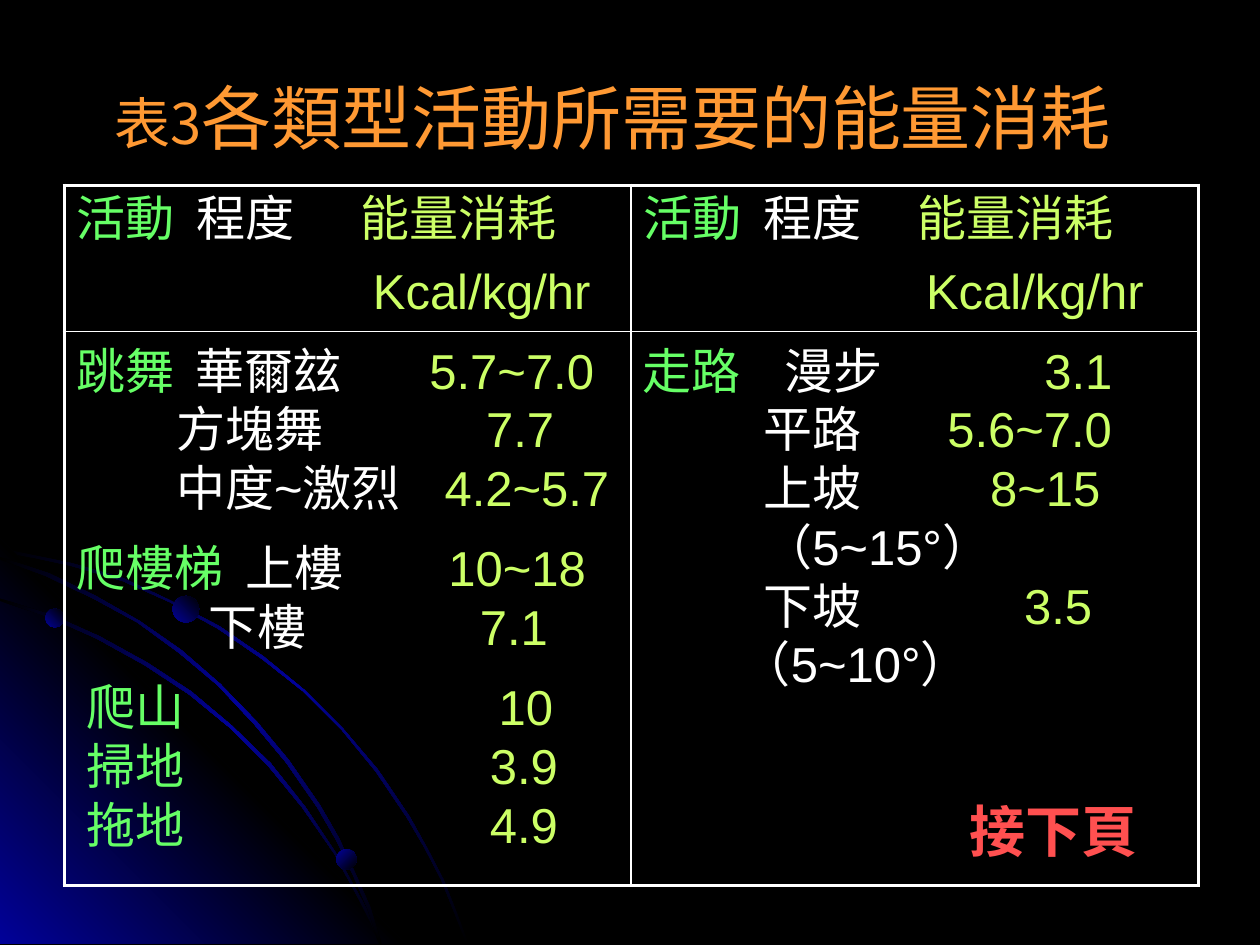
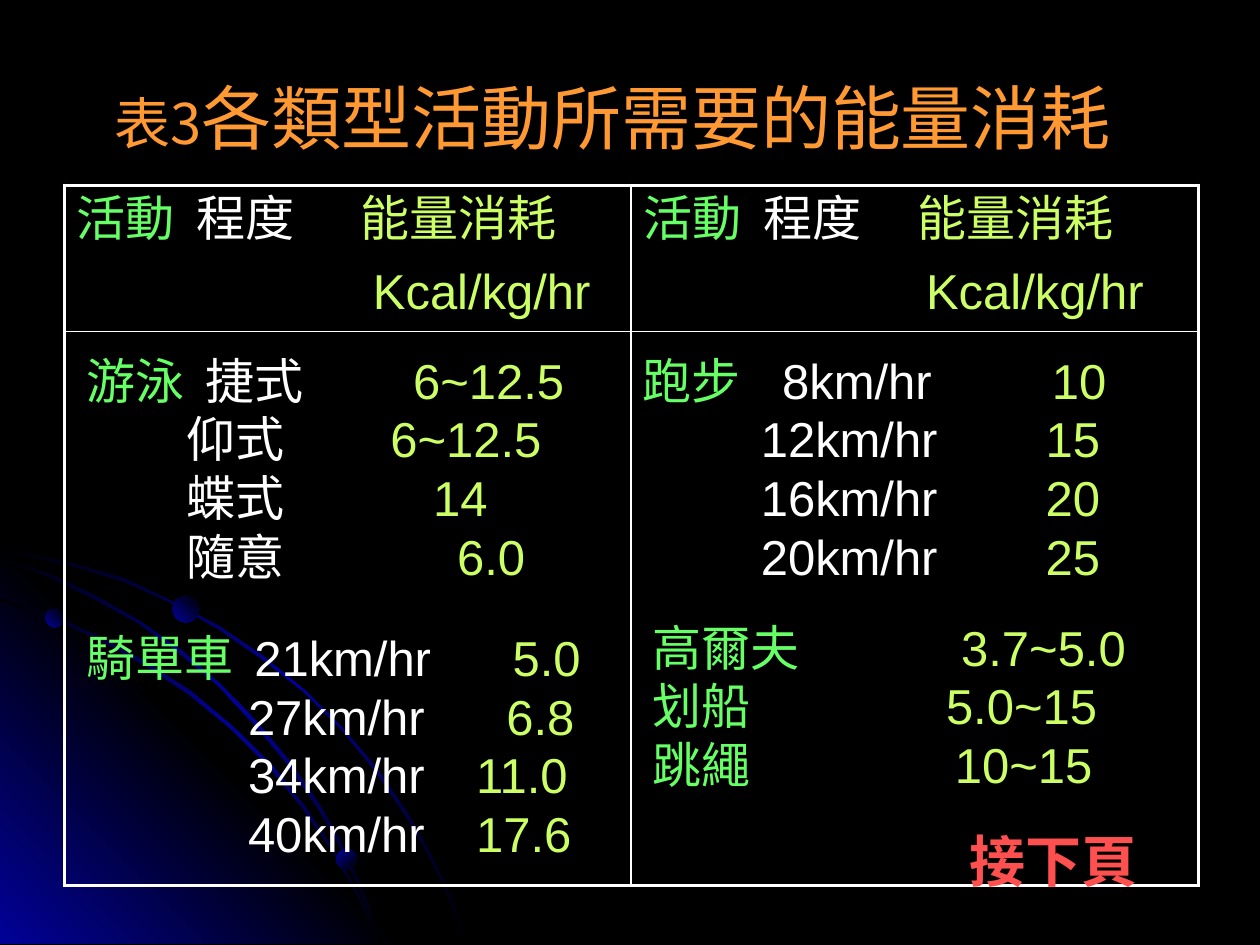
from lxml.etree import SubElement
from pptx import Presentation
from pptx.dml.color import RGBColor
from pptx.enum.shapes import MSO_SHAPE as Shape
from pptx.enum.text import MSO_ANCHOR as Anchor, PP_ALIGN as Align
from pptx.oxml.ns import qn
from pptx.util import Pt

PX = 9144
BLACK = RGBColor(0x00, 0x00, 0x00)
NAVY = RGBColor(0x01, 0x01, 0x99)
WHITE = RGBColor(0xFF, 0xFF, 0xFF)
ORANGE = RGBColor(0xFF, 0x99, 0x33)
GREEN = RGBColor(0x66, 0xFF, 0x66)
LIME = RGBColor(0xCC, 0xFF, 0x66)
RED = RGBColor(0xFF, 0x50, 0x50)
BODY_FONT, TITLE_FONT = "Arial", "Noto Sans CJK SC"
INSET = 10
THICK, THIN = 2.25, 1
TABLE_LEFT, TABLE_TOP, COL_WIDTH = 51, 147, 450
ROW_HEIGHTS = (116, 440)

WIDE_ARC = [
    (57, 447), (28, 441), (0, 435), (0, 438), (28, 443), (56, 449), (97, 461), (135, 478),
    (173, 499), (208, 523), (241, 549), (271, 579), (298, 612), (323, 649), (337, 673),
    (350, 698), (360, 723), (370, 749), (372, 749), (362, 723), (352, 698), (339, 673),
    (325, 648), (300, 611), (272, 578), (242, 548), (209, 521), (174, 497), (136, 477),
    (98, 459)]
GLOW = [(322, 749), (0, 749), (0, 427)]
LOW_ARC = [
    (285, 714), (294, 732), (301, 749), (303, 749), (296, 730), (286, 712), (266, 676),
    (242, 640), (215, 606), (184, 576), (152, 549), (117, 526), (79, 505), (41, 488),
    (0, 475), (0, 477), (39, 490), (77, 507), (115, 528), (150, 551), (183, 578),
    (213, 608), (240, 641), (265, 677)]
MIDDLE_ARC = [
    (0, 442), (0, 444), (36, 457), (74, 475), (109, 494), (142, 518), (173, 544), (202, 575),
    (227, 605), (252, 641), (267, 667), (280, 694), (292, 722), (301, 749), (303, 749),
    (294, 720), (282, 693), (269, 665), (254, 639), (229, 603), (204, 573), (175, 543),
    (144, 516), (111, 493), (76, 473), (39, 455)]
ARC_STOPS = (BLACK, NAVY, BLACK)
BALLS = [(36, 483, 15, 315), (267, 674, 16, 45), (137, 473, 21, 315)]

# Each row: activity, degree, degree x, energy, energy x
HEADERS = [
    [("活動", "程度", 156, "能量消耗", 286), ("", "", 0, "Kcal/kg/hr", 296)],
    [("活動", "程度", 606, "能量消耗", 728), ("", "", 0, "Kcal/kg/hr", 735)],
]
DANCE = [("跳舞", "華爾玆", 155, "5.7~7.0", 341),
         ("", "方塊舞", 140, "7.7", 386),
         ("", "中度~激烈", 140, "4.2~5.7", 353)]
STAIRS = [("爬樓梯", "上樓", 195, "10~18", 356),
          ("", "下樓", 166, "7.1", 381)]
CHORES = [("爬山", "", 0, "10", 396),
          ("掃地", "", 0, "3.9", 389),
          ("拖地", "", 0, "4.9", 389)]
WALKING = [("走路", "漫步", 623, "3.1", 829),
           ("", "平路", 606, "5.6~7.0", 752),
           ("", "上坡", 606, "8~15", 786),
           ("", "（5~15°）", 606, "", 0),
           ("", "下坡", 606, "3.5", 813),
           ("", "（5~10°）", 589, "", 0)]
SWIMMING = [("游泳", "捷式", 163, "6~12.5", 328),
            ("", "仰式", 148, "6~12.5", 310),
            ("", "蝶式", 148, "14", 344),
            ("", "隨意", 148, "6.0", 363)]
CYCLING = [("騎單車", "21km/hr", 202, "5.0", 407),
           ("", "27km/hr", 197, "6.8", 402),
           ("", "34km/hr", 197, "11.0", 378),
           ("", "40km/hr", 197, "17.6", 378)]
RUNNING = [("跑步", "8km/hr", 621, "10", 835)] + [
    ("", f"{speed}km/hr", 604, energy, 830)
    for speed, energy in ((12, "15"), (16, "20"), (20, "25"))]
SPORTS = [("高爾夫", "", 0, "3.7~5.0", 763),
          ("划船", "", 0, "5.0~15", 751),
          ("跳繩", "", 0, "10~15", 758)]

SLIDES = [
    (627, [(DANCE, 51, 265, 465, 150), (STAIRS, 51, 422, 465, 103),
           (CHORES, 59, 532, 473, 150), (WALKING, 500, 265, 465, 360)]),
    (651, [(SWIMMING, 59, 273, 457, 197), (CYCLING, 59, 493, 449, 197),
           (RUNNING, 500, 273, 480, 267), (SPORTS, 508, 485, 461, 220)]),
]


def box(*lengths):
    """Turn px lengths into EMU."""
    return [n * PX for n in lengths]


def add_run(p, text, size, color, font=BODY_FONT, bold=False):
    """Append one formatted run to a paragraph."""
    r = p.add_run()
    r.text = text
    r.font.size, r.font.name, r.font.bold = Pt(size), font, bold
    r.font.color.rgb = color


def set_gradient(s, colors, angle):
    """Fill a shape with evenly spaced gradient stops and no outline."""
    s.shadow.inherit = False
    s.line.fill.background()
    s.fill.gradient()
    grad = s.element.spPr.find(qn("a:gradFill"))
    for child in list(grad):
        grad.remove(child)
    stops = SubElement(grad, qn("a:gsLst"))
    for i, color in enumerate(colors):
        stop = SubElement(stops, qn("a:gs"), pos=str(100000 * i // (len(colors) - 1)))
        SubElement(stop, qn("a:srgbClr"), val=str(color))
    SubElement(grad, qn("a:lin"), ang=str(angle * 60000), scaled="0")


def add_outline(slide, points, colors, angle):
    """Draw a closed gradient outline."""
    builder = slide.shapes.build_freeform(*points[0], scale=PX)
    builder.add_line_segments(points[1:], close=True)
    s = builder.convert_to_shape()
    set_gradient(s, colors, angle)
    return s


def add_ball(slide, left, top, size, angle):
    """Draw a small shaded ball."""
    s = slide.shapes.add_shape(Shape.OVAL, *box(left, top, size, size))
    set_gradient(s, (NAVY, BLACK), angle)
    return s


def decorate_master(prs, slide):
    """Put the background, arcs and balls on the slide master."""
    master = prs.slide_master
    master.background.fill.solid()
    master.background.fill.fore_color.rgb = BLACK
    shapes = [add_outline(slide, WIDE_ARC, ARC_STOPS, 45),
              add_outline(slide, GLOW, (NAVY, BLACK, NAVY), 315),
              add_outline(slide, LOW_ARC, ARC_STOPS, 45),
              add_outline(slide, MIDDLE_ARC, ARC_STOPS, 45)]
    shapes += [add_ball(slide, *ball) for ball in BALLS]
    for i, s in enumerate(shapes):
        s.element.nvSpPr.cNvPr.id = 20 + i
        master.shapes.element.insert(2 + i, s.element)


def add_title(slide):
    """Place and fill the title."""
    s = slide.shapes.title
    s.left, s.top, s.width, s.height = box(35, 30, 915, 125)
    tf = s.text_frame
    tf.vertical_anchor = Anchor.MIDDLE
    p = tf.paragraphs[0]
    p.alignment = Align.CENTER
    add_run(p, "表3", 32, ORANGE, TITLE_FONT)
    add_run(p, "各類型活動所需要的能量消耗 ", 40, ORANGE, TITLE_FONT)


def write_rows(tf, rows, left, space=0):
    """Write activity rows, aligned by tab stops."""
    for i, (activity, degree, degree_x, energy, energy_x) in enumerate(rows):
        p = tf.add_paragraph() if i else tf.paragraphs[0]
        p.line_spacing, p.space_before = Pt(33.6), Pt(space)
        tabs = SubElement(p._p.get_or_add_pPr(), qn("a:tabLst"))
        if activity:
            add_run(p, activity, 28, GREEN)
        for text, x, color in ((degree, degree_x, WHITE), (energy, energy_x, LIME)):
            if text:
                SubElement(tabs, qn("a:tab"), pos=str((x - left - INSET) * PX), algn="l")
                add_run(p, "\t" + text, 28, color)


def add_text_box(slide, left, top, width, height):
    """Add a wrapping text box and return its frame."""
    tf = slide.shapes.add_textbox(*box(left, top, width, height)).text_frame
    tf.word_wrap = True
    return tf


def set_borders(cell, **widths):
    """Draw white cell borders of the given point widths."""
    tcPr = cell._tc.get_or_add_tcPr()
    for side, width in widths.items():
        ln = SubElement(tcPr, qn(f"a:ln{side}"), w=str(Pt(width)))
        fill = SubElement(ln, qn("a:solidFill"))
        SubElement(fill, qn("a:srgbClr"), val=str(WHITE))


def add_energy_table(slide):
    """Add the two-column frame with its header cells."""
    size = box(TABLE_LEFT, TABLE_TOP, 2 * COL_WIDTH, sum(ROW_HEIGHTS))
    table = slide.shapes.add_table(2, 2, *size).table
    table.first_row = table.horz_banding = False
    for row, height in enumerate(ROW_HEIGHTS):
        table.rows[row].height = height * PX
        for col in range(2):
            cell = table.cell(row, col)
            set_borders(cell, L=THIN if col else THICK, R=THICK if col else THIN,
                        T=THIN if row else THICK, B=THICK if row else THIN)
            cell.fill.background()
    for col, rows in enumerate(HEADERS):
        write_rows(table.cell(0, col).text_frame, rows, TABLE_LEFT + col * COL_WIDTH, 6.4)


def main():
    """Build both slides of the energy table."""
    prs = Presentation()
    prs.slide_width, prs.slide_height = box(1000, 750)
    for number, (next_top, groups) in enumerate(SLIDES):
        slide = prs.slides.add_slide(prs.slide_layouts[5])
        if number == 0:
            decorate_master(prs, slide)
        add_title(slide)
        add_energy_table(slide)
        tf = add_text_box(slide, 760, next_top, 213, 63)
        add_run(tf.paragraphs[0], "接下頁", 32, RED, bold=True)
        for rows, left, *rest in groups:
            write_rows(add_text_box(slide, left, *rest), rows, left)
    prs.save("out.pptx")


if __name__ == "__main__":
    main()
